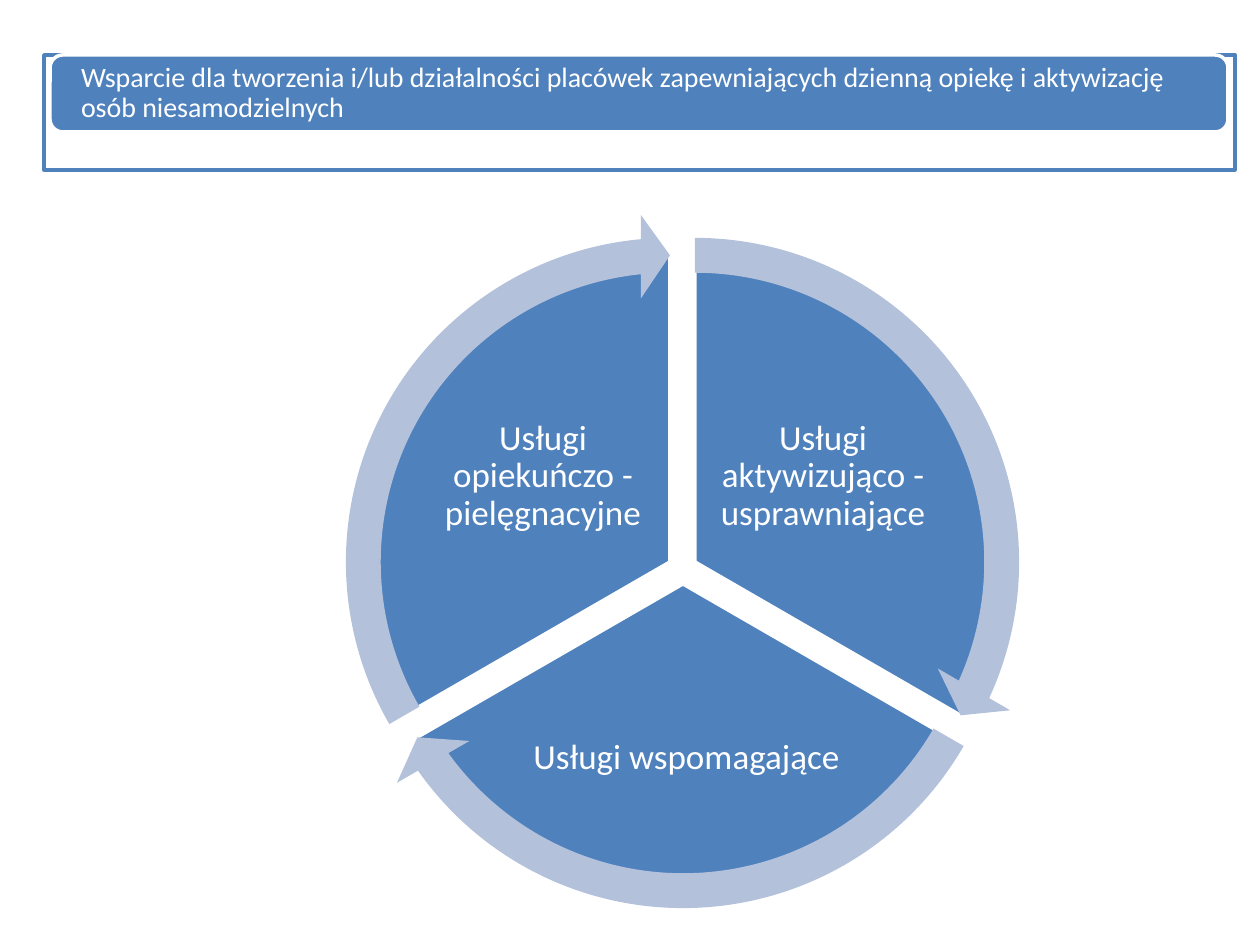
from pptx import Presentation
from pptx.dml.color import RGBColor
from pptx.enum.shapes import MSO_SHAPE
from pptx.enum.text import MSO_ANCHOR, PP_ALIGN
from pptx.oxml.ns import qn
from pptx.util import Pt
from lxml import etree

RECT, ROUND = MSO_SHAPE.RECTANGLE, MSO_SHAPE.ROUNDED_RECTANGLE
PIE, ARROW = MSO_SHAPE.PIE, MSO_SHAPE.CIRCULAR_ARROW
LEFT, CENTER = PP_ALIGN.LEFT, PP_ALIGN.CENTER
MIDDLE = MSO_ANCHOR.MIDDLE

PX = 914400 / 126
BLUE, PALE, WHITE = "4F81BD", "B3C1DB", "FFFFFF"
FONT = "Calibri"
TITLE = ("Wsparcie dla tworzenia i/lub działalności placówek zapewniających "
         "dzienną opiekę i aktywizację osób niesamodzielnych")
FRAME = (44, 55, 1191, 115)
BANNER = (50, 55, 1178, 77)

# text, start angle, centre of the sector, box of the label
SECTORS = [
    ("Usługi aktywizująco - usprawniające", 270, (695, 562), (712, 384, 222, 185)),
    ("Usługi wspomagające", 30, (683, 584), (520, 677, 333, 163)),
    ("Usługi opiekuńczo - pielęgnacyjne", 150, (670, 562), (432, 384, 222, 185)),
]
SWEEP = 120
DISC, RING = 620, 697
HEAD = 5.46     # degrees taken by the arrowhead
BAND, FLARE = 0.05, 0.06


def emu(*sizes):
    return [round(size * PX) for size in sizes]


def color(code):
    return RGBColor.from_string(code)


def angle(deg):
    """Turn degrees into the unit of shape adjustments."""
    return deg % 360 * 0.6


def square(mid, size):
    return mid[0] - size / 2, mid[1] - size / 2, size, size


def add_form(kind, box, fill, line=None, adjust=()):
    form = slide.shapes.add_shape(kind, *emu(*box))
    form.shadow.inherit = False
    form.fill.solid()
    form.fill.fore_color.rgb = color(fill)
    if line:
        form.line.color.rgb = color(line)
        form.line.width = Pt(2)
    else:
        form.line.fill.background()
    for i, value in enumerate(adjust):
        form.adjustments[i] = value
    return form


def add_label(text, box, size, align, side, edge):
    frame = slide.shapes.add_textbox(*emu(*box)).text_frame
    frame.word_wrap = True
    frame.vertical_anchor = MIDDLE
    frame.margin_left, frame.margin_right = emu(side, side)
    frame.margin_top, frame.margin_bottom = emu(edge, edge)
    para = frame.paragraphs[0]
    para.text = text
    para.alignment = align
    para.line_spacing = 0.9
    para.font.name = FONT
    para.font.size = Pt(size)
    para.font.color.rgb = color(WHITE)


prs = Presentation()
prs.slide_width, prs.slide_height = emu(1260, 945)
slide = prs.slides.add_slide(prs.slide_layouts[6])

for text, start, mid, box in SECTORS:
    add_form(PIE, square(mid, DISC), BLUE, WHITE,
             (angle(start), angle(start + SWEEP)))
    add_label(text, box, 20, CENTER, 4, 4)

for text, start, mid, box in SECTORS:
    add_form(ARROW, square(mid, RING), PALE, adjust=(
        BAND, angle(HEAD), angle(start + SWEEP - HEAD), angle(start), FLARE))

panel = add_form(RECT, FRAME, WHITE, BLUE)
tint = panel.fill._xPr.find(qn("a:solidFill"))[0]
etree.SubElement(tint, qn("a:alpha")).set("val", "90000")
add_form(ROUND, BANNER, BLUE, WHITE)
add_label(TITLE, BANNER, 16, LEFT, 31, 0)

prs.save("out.pptx")
